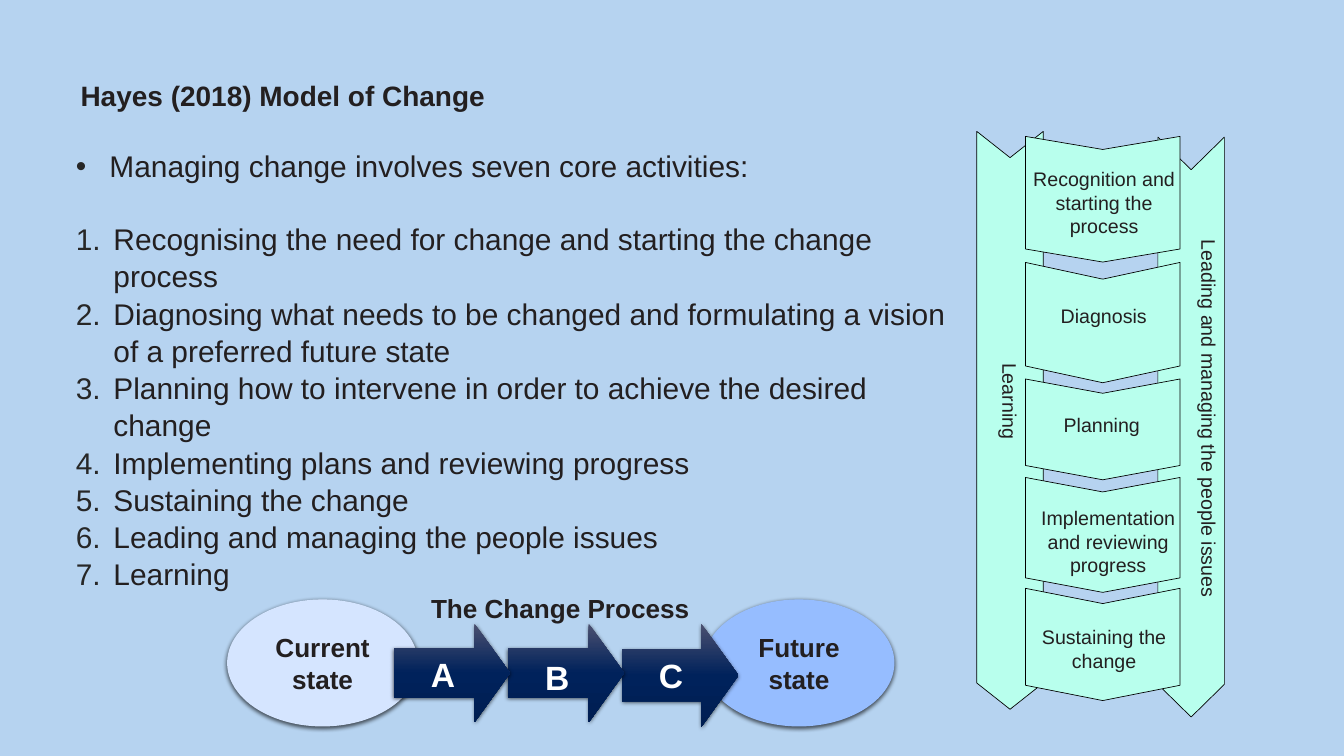
"""Build the slide on the Hayes model of change."""
from dataclasses import dataclass, field
from typing import Any, Optional

from lxml.etree import SubElement
from pptx import Presentation
from pptx.dml.color import RGBColor
from pptx.enum.shapes import MSO_SHAPE as Preset
from pptx.enum.text import MSO_ANCHOR as Anchor, PP_ALIGN as Align
from pptx.oxml.ns import qn
from pptx.util import Inches, Pt

SKY = RGBColor(0xB6, 0xD3, 0xF0)
MINT = RGBColor(0xB8, 0xFF, 0xED)
PALE_BLUE = RGBColor(0xD5, 0xE5, 0xFF)
MID_BLUE = RGBColor(0x96, 0xBD, 0xFF)
INK = RGBColor(0x23, 0x1F, 0x20)
BULLET = RGBColor(0x27, 0x27, 0x27)
BLACK = RGBColor(0, 0, 0)
WHITE = RGBColor(0xFF, 0xFF, 0xFF)
ARROW_STOPS = {
    0: RGBColor(0x4B, 0x50, 0x70),
    50: RGBColor(0, 0x22, 0x5B),
    100: RGBColor(0, 0x1E, 0x51),
}

WIDTH, HEIGHT = Inches(20), Inches(11.25)
COLUMN, ROW = WIDTH / 200, HEIGHT / 112.5

SMALL = {"name": "Arial", "size": Pt(21)}
BODY = {"name": "Arial", "size": Pt(32)}
TITLE = {"name": "Arial", "size": Pt(30), "bold": True}
STATE = {"name": "Arial", "size": Pt(28), "bold": True}
LETTER = {"name": "Arial", "size": Pt(36), "bold": True}
PLAIN = {"margin_left": Inches(0.1), "margin_right": Inches(0.1),
         "margin_top": Inches(0.05), "margin_bottom": Inches(0.05),
         "vertical_anchor": Anchor.TOP, "word_wrap": True}
ROOMY = PLAIN | {"margin_left": Inches(0.15), "margin_right": Inches(0.15),
                 "margin_top": Inches(0.08), "margin_bottom": Inches(0.08)}
MIDDLE = PLAIN | {"vertical_anchor": Anchor.MIDDLE}
LOWERED = ROOMY | {"margin_top": Inches(0.13)}
CENTRED = {"alignment": Align.CENTER}


@dataclass(frozen=True)
class Area:
    """A rectangle in grid columns and rows."""

    left: float
    top: float
    width: float
    height: float

    def lengths(self) -> tuple[int, ...]:
        """Return the rectangle in slide units."""
        return (round(self.left * COLUMN), round(self.top * ROW),
                round(self.width * COLUMN), round(self.height * ROW))

    def turned(self) -> "Area":
        """Return the rectangle that covers this one after a quarter turn."""
        shift = (self.width - self.height) / 2
        return Area(self.left + shift, self.top - shift, self.height, self.width)


@dataclass(frozen=True)
class Label:
    """A piece of text with its place and formats."""

    area: Area
    lines: tuple[str, ...]
    font: dict[str, Any]
    frame: dict[str, Any] = field(default_factory=lambda: ROOMY)
    para: dict[str, Any] = field(default_factory=lambda: CENTRED)
    vertical: bool = False


@dataclass(frozen=True)
class Chevron:
    """A downward chevron and its label."""

    area: Area
    depth: float
    label: Label


@dataclass(frozen=True)
class Node:
    """An ellipse or arrow of the change process."""

    preset: Preset
    area: Area
    lines: tuple[str, ...]
    font: dict[str, Any]
    frame: dict[str, Any]
    color: Optional[RGBColor] = None
    adjust: tuple[float, ...] = ()


def apply(target: Any, formats: dict[str, Any]) -> None:
    """Set every format value on the target."""
    for name, value in formats.items():
        setattr(target, name, value)


def write(frame: Any, lines: tuple[str, ...], font: dict[str, Any],
          layout: dict[str, Any], form: dict[str, Any], color: RGBColor = INK) -> None:
    """Write one paragraph per line."""
    apply(frame, layout)
    for index, line in enumerate(lines):
        para = frame.add_paragraph() if index else frame.paragraphs[0]
        apply(para, form)
        span = para.add_run()
        span.text = line
        apply(span.font, font)
        span.font.color.rgb = color


def add_label(page: Any, label: Label) -> Any:
    """Add a text box and return its frame."""
    frame = page.shapes.add_textbox(*label.area.lengths()).text_frame
    write(frame, label.lines, label.font, label.frame, label.para)
    if label.vertical:
        frame._txBody.bodyPr.set("vert", "vert")
    return frame


def add_chevron(page: Any, chevron: Chevron) -> None:
    """Add a chevron pointing down, then its label."""
    shape = page.shapes.add_shape(Preset.CHEVRON, *chevron.area.turned().lengths())
    shape.rotation = 90
    shape.adjustments[0] = chevron.depth
    shape.shadow.inherit = False
    shape.fill.solid()
    shape.fill.fore_color.rgb = MINT
    shape.line.color.rgb = BLACK
    shape.line.width = Pt(0.75)
    add_label(page, chevron.label)


def add_color(parent: Any, color: RGBColor) -> Any:
    """Append a colour element."""
    return SubElement(parent, qn("a:srgbClr"), val=str(color))


def shade(shape: Any) -> None:
    """Fill the shape with the dark vertical gradient."""
    shape.fill.gradient()
    shape.fill.gradient_angle = 270
    stops = shape._element.spPr.find(qn("a:gradFill")).find(qn("a:gsLst"))
    for stop in list(stops):
        stops.remove(stop)
    for share, color in ARROW_STOPS.items():
        add_color(SubElement(stops, qn("a:gs"), pos=str(share * 1000)), color)


def cast_shadow(shape: Any) -> None:
    """Give the shape a soft shadow below it."""
    shape.shadow.inherit = False
    effects = shape._element.spPr.find(qn("a:effectLst"))
    shadow = SubElement(effects, qn("a:outerShdw"), blurRad=str(Pt(4.5)),
                        dist=str(Pt(1.5)), dir="5400000", rotWithShape="0")
    SubElement(add_color(shadow, BLACK), qn("a:alpha"), val="63000")


def add_node(page: Any, node: Node) -> None:
    """Add one part of the change process."""
    shape = page.shapes.add_shape(node.preset, *node.area.lengths())
    for index, value in enumerate(node.adjust):
        shape.adjustments[index] = value
    if node.color is None:
        shade(shape)
    else:
        shape.fill.solid()
        shape.fill.fore_color.rgb = node.color
    shape.line.fill.background()
    cast_shadow(shape)
    write(shape.text_frame, node.lines, node.font, node.frame, CENTRED,
          INK if node.color else WHITE)


def add_marker(para: Any, tag: str, indent: float, **values: str) -> None:
    """Give the paragraph a hanging bullet or number."""
    props = para._p.get_or_add_pPr()
    props.set("marL", str(Inches(indent)))
    props.set("indent", str(-Inches(indent)))
    add_color(SubElement(props, qn("a:buClr")), BULLET)
    SubElement(props, qn("a:buFont"), typeface="Arial")
    SubElement(props, qn(tag), **values)


def step(top: float, height: float, depth: float, area: Area, *lines: str) -> Chevron:
    """Describe a step of the central column."""
    return Chevron(Area(152.6, top, 23, height), depth, Label(area, lines, SMALL))


CHEVRONS = (
    Chevron(Area(145.35, 19.55, 9.9, 86), 0.395,
            Label(Area(146.6, 47.9, 7, 23.6), ("Learning",), SMALL, vertical=True)),
    Chevron(Area(172.3, 20.4, 9.9, 86.3), 0.491,
            Label(Area(176.2, 34.9, 7, 60.3), ("Leading and managing the people issues",),
                  SMALL, para={}, vertical=True)),
    step(20.3, 18.7, 0.104, Area(151.3, 24.1, 26, 14.3),
         "Recognition and", "starting the process"),
    step(39.05, 17.9, 0.139, Area(153.6, 44.4, 21.3, 7.1), "Diagnosis"),
    step(56.4, 15, 0.142, Area(155.5, 60.6, 16.9, 5.6), "Planning"),
    step(71.05, 17.1, 0.126, Area(152.5, 74.5, 24.8, 10),
         "Implementation and reviewing progress"),
    step(87.55, 16.7, 0.136, Area(152.5, 92.2, 23.6, 5.3), "Sustaining the change"),
)
NODES = (
    *(Node(Preset.OVAL, Area(left, 89.2, 28.4, 18.9), (name, "state"), STATE, MIDDLE, color)
      for left, name, color in ((33.8, "Current", PALE_BLUE), (104.7, "Future", MID_BLUE))),
    *(Node(Preset.RIGHT_ARROW, Area(58.6 + 17 * place, 92.8, 17.3, height), (letter,),
           LETTER, layout, adjust=(0.5, 0.36))
      for place, height, letter, layout in (
          (2, 15.4, "C", ROOMY), (1, 14.7, "B", LOWERED), (0, 14.7, "A", ROOMY))),
)
HEADING = Label(Area(11, 11.7, 178.1, 6.2), ("Hayes (2018) Model of Change",),
                TITLE, PLAIN, {"line_spacing": 0.9})
PROCESS = Label(Area(60.3, 87.6, 46.1, 5.7), ("The Change Process",), STATE, PLAIN)
ACTIVITIES = Label(Area(10.3, 21.3, 133.1, 65.3), (
    "Managing change involves seven core activities:",
    "Recognising the need for change and starting the change process",
    "Diagnosing what needs to be changed and formulating a vision of a preferred future state",
    "Planning how to intervene in order to achieve the desired change",
    "Implementing plans and reviewing progress",
    "Sustaining the change",
    "Leading and managing the people issues",
    "Learning",
), BODY, PLAIN, {"line_spacing": 1.04})


def main() -> None:
    """Build and save the deck."""
    deck = Presentation()
    apply(deck, {"slide_width": WIDTH, "slide_height": HEIGHT})
    page = deck.slides.add_slide(deck.slide_layouts[6])
    page.background.fill.solid()
    page.background.fill.fore_color.rgb = SKY
    for chevron in CHEVRONS:
        add_chevron(page, chevron)
    add_label(page, HEADING)
    intro, *items = add_label(page, ACTIVITIES).paragraphs
    intro.space_after = Pt(38)
    add_marker(intro, "a:buChar", 0.5, char="•")
    for item in items:
        add_marker(item, "a:buAutoNum", 0.56, type="arabicPeriod")
    for node in NODES:
        add_node(page, node)
    add_label(page, PROCESS)
    deck.save("out.pptx")


if __name__ == "__main__":
    main()
